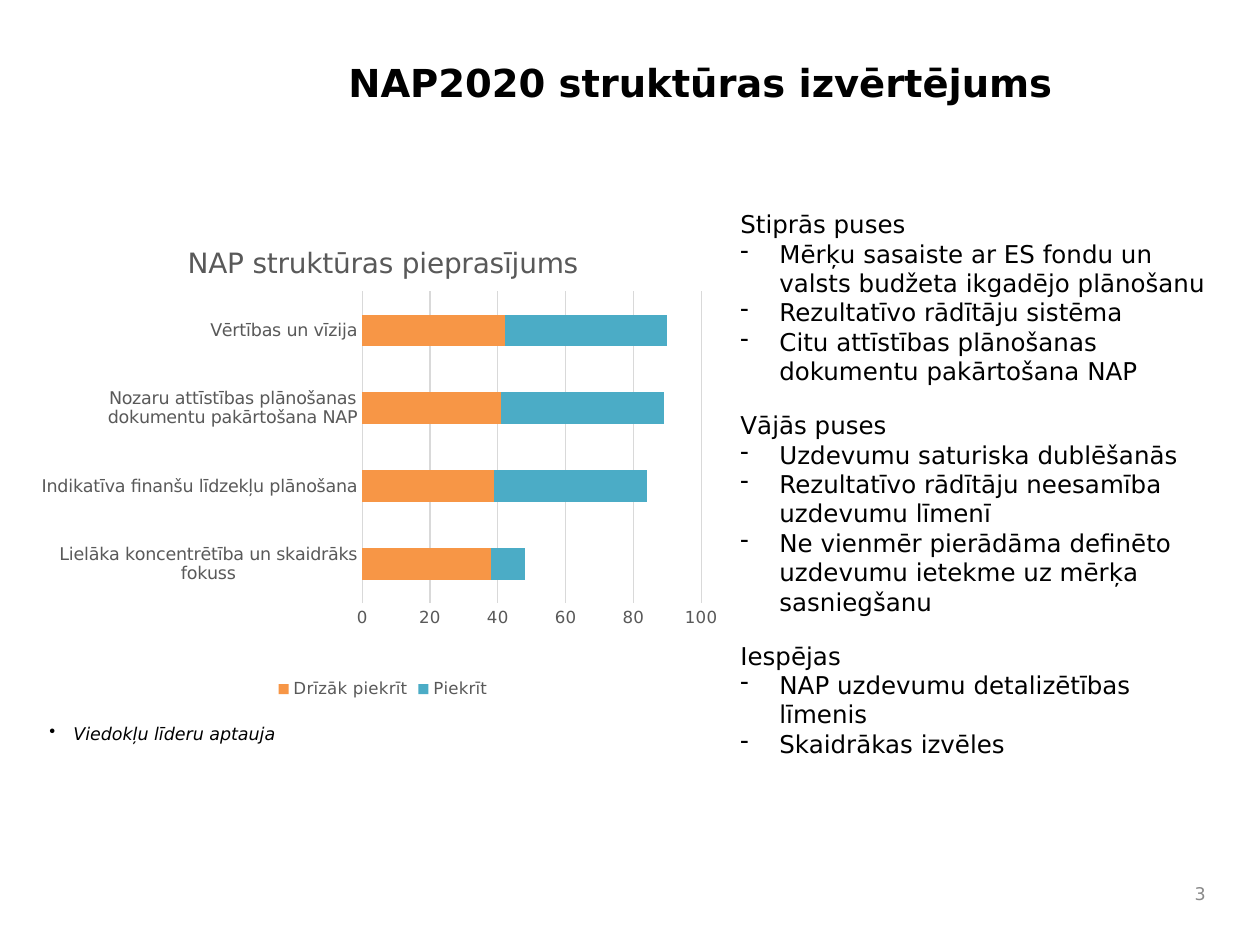
from dataclasses import dataclass

import pptx
import pptx.chart.data
import pptx.dml.color
import pptx.enum.chart
import pptx.enum.text
import pptx.oxml
import pptx.oxml.ns
import pptx.util

EMU_PER_PX = 914400 / 126
FONT = "DejaVu Sans"
COLORS = {
    "text": "000000",
    "chart_text": "595959",
    "grid": "D9D9D9",
    "number": "898989",
    "rather_agree": "F79646",
    "agree": "4BACC6",
}


@dataclass
class Box:
    left: int
    top: int
    width: int
    height: int


@dataclass
class Section:
    heading: str
    points: list[str]


@dataclass
class Series:
    name: str
    values: list[int]
    color: str


SECTIONS = [
    Section("Stiprās puses", [
        "Mērķu sasaiste ar ES fondu un valsts budžeta ikgadējo plānošanu",
        "Rezultatīvo rādītāju sistēma",
        "Citu attīstības plānošanas dokumentu pakārtošana NAP",
    ]),
    Section("Vājās puses", [
        "Uzdevumu saturiska dublēšanās",
        "Rezultatīvo rādītāju neesamība uzdevumu līmenī",
        "Ne vienmēr pierādāma definēto uzdevumu ietekme uz mērķa sasniegšanu",
    ]),
    Section("Iespējas", [
        "NAP uzdevumu detalizētības līmenis",
        "Skaidrākas izvēles",
    ]),
]
CATEGORIES = [
    "Lielāka koncentrētība un skaidrāks fokuss",
    "Indikatīva finanšu līdzekļu plānošana",
    "Nozaru attīstības plānošanas dokumentu pakārtošana NAP",
    "Vērtības un vīzija",
]
SERIES = [
    Series("Drīzāk piekrīt", [38, 39, 41, 42], "rather_agree"),
    Series("Piekrīt", [10, 45, 48, 48], "agree"),
]
PLOT_AREA = {"x": 0.47, "y": 0.14, "w": 0.49, "h": 0.65}


def px(length: int) -> int:
    return round(length * EMU_PER_PX)


def place(box: Box) -> tuple[int, int, int, int]:
    return px(box.left), px(box.top), px(box.width), px(box.height)


def rgb(color: str) -> pptx.dml.color.RGBColor:
    return pptx.dml.color.RGBColor.from_string(COLORS[color])


def style_font(font, size: float, color: str, bold=False, italic=False) -> None:
    font.name = FONT
    font.size = pptx.util.Pt(size)
    font.bold = bold
    font.italic = italic
    font.color.rgb = rgb(color)


def add_text_frame(slide, box: Box, wrap=True, anchor="TOP"):
    frame = slide.shapes.add_textbox(*place(box)).text_frame
    frame.word_wrap = wrap
    frame.vertical_anchor = pptx.enum.text.MSO_ANCHOR[anchor]
    return frame


def write(frame, text: str, *, size: float, color="text", bold=False, italic=False,
          align="LEFT", bullet="", indent=0, space_before=0) -> None:
    """Fill the frame's empty first paragraph, or append a new one."""
    paragraph = frame.paragraphs[0] if not frame.text else frame.add_paragraph()
    paragraph.alignment = pptx.enum.text.PP_ALIGN[align]
    if space_before:
        paragraph.space_before = pptx.util.Pt(space_before)
    if bullet:
        properties = paragraph._p.get_or_add_pPr()
        properties.set("marL", str(px(indent)))
        properties.set("indent", str(-px(indent)))
        mark = pptx.oxml.ns.qn("a:buChar")
        properties.append(properties.makeelement(mark, {"char": bullet}))
    run = paragraph.add_run()
    run.text = text
    style_font(run.font, size, color, bold, italic)


def set_plot_layout(chart) -> None:
    """Fix the inner plot area as fractions of the chart."""
    settings = {"layoutTarget": "inner", "xMode": "edge", "yMode": "edge", **PLOT_AREA}
    parts = "".join(f'<c:{tag} val="{value}"/>' for tag, value in settings.items())
    layout = pptx.oxml.parse_xml(
        f'<c:layout {pptx.oxml.ns.nsdecls("c")}><c:manualLayout>{parts}'
        "</c:manualLayout></c:layout>"
    )
    plot_area = chart._chartSpace.chart.plotArea
    for old_layout in plot_area.findall(pptx.oxml.ns.qn("c:layout")):
        plot_area.remove(old_layout)
    plot_area.insert(0, layout)


def style_axes(chart) -> None:
    for axis, size in ((chart.category_axis, 10), (chart.value_axis, 9.5)):
        axis.major_tick_mark = pptx.enum.chart.XL_TICK_MARK.NONE
        axis.minor_tick_mark = pptx.enum.chart.XL_TICK_MARK.NONE
        style_font(axis.tick_labels.font, size, "chart_text")
    value_axis = chart.value_axis
    value_axis.minimum_scale = 0
    value_axis.maximum_scale = 100
    value_axis.major_unit = 20
    value_axis.has_major_gridlines = True
    value_axis.format.line.fill.background()
    for line in (chart.category_axis.format.line, value_axis.major_gridlines.format.line):
        line.color.rgb = rgb("grid")
        line.width = pptx.util.Pt(0.75)


def add_demand_chart(slide, box: Box) -> None:
    data = pptx.chart.data.CategoryChartData()
    data.categories = CATEGORIES
    for series in SERIES:
        data.add_series(series.name, series.values)
    chart_type = pptx.enum.chart.XL_CHART_TYPE.BAR_STACKED
    chart = slide.shapes.add_chart(chart_type, *place(box), data).chart
    style_font(chart.font, 10, "text")

    chart.has_title = True
    write(chart.chart_title.text_frame, "NAP struktūras pieprasījums",
          size=16, color="chart_text", align="CENTER")
    chart.chart_title.include_in_layout = False

    chart.has_legend = True
    chart.legend.position = pptx.enum.chart.XL_LEGEND_POSITION.BOTTOM
    chart.legend.include_in_layout = False
    style_font(chart.legend.font, 9.5, "chart_text")

    plot = chart.plots[0]
    plot.gap_width = 150
    plot.overlap = 100
    plot.vary_by_categories = False
    for bars, series in zip(plot.series, SERIES):
        bars.format.fill.solid()
        bars.format.fill.fore_color.rgb = rgb(series.color)
    style_axes(chart)
    set_plot_layout(chart)


def add_sections(slide, box: Box) -> None:
    frame = add_text_frame(slide, box)
    for index, section in enumerate(SECTIONS):
        write(frame, section.heading, size=14, space_before=14 if index else 0)
        for point in section.points:
            write(frame, point, size=14, bullet="-", indent=39)


def main() -> None:
    presentation = pptx.Presentation()
    presentation.slide_width = px(1260)
    presentation.slide_height = px(945)
    slide = presentation.slides.add_slide(presentation.slide_layouts[6])

    title = add_text_frame(slide, Box(336, 53, 840, 142))
    write(title, "NAP2020 struktūras izvērtējums", size=22, bold=True)
    add_demand_chart(slide, Box(37, 224, 692, 480))
    number = add_text_frame(slide, Box(1176, 872, 42, 42), anchor="MIDDLE")
    write(number, "3", size=10, color="number", align="RIGHT")
    source = add_text_frame(slide, Box(37, 717, 261, 34), wrap=False)
    write(source, "Viedokļu līderu aptauja", size=10, italic=True, bullet="•", indent=24)
    add_sections(slide, Box(728, 203, 510, 538))

    presentation.save("out.pptx")


if __name__ == "__main__":
    main()
